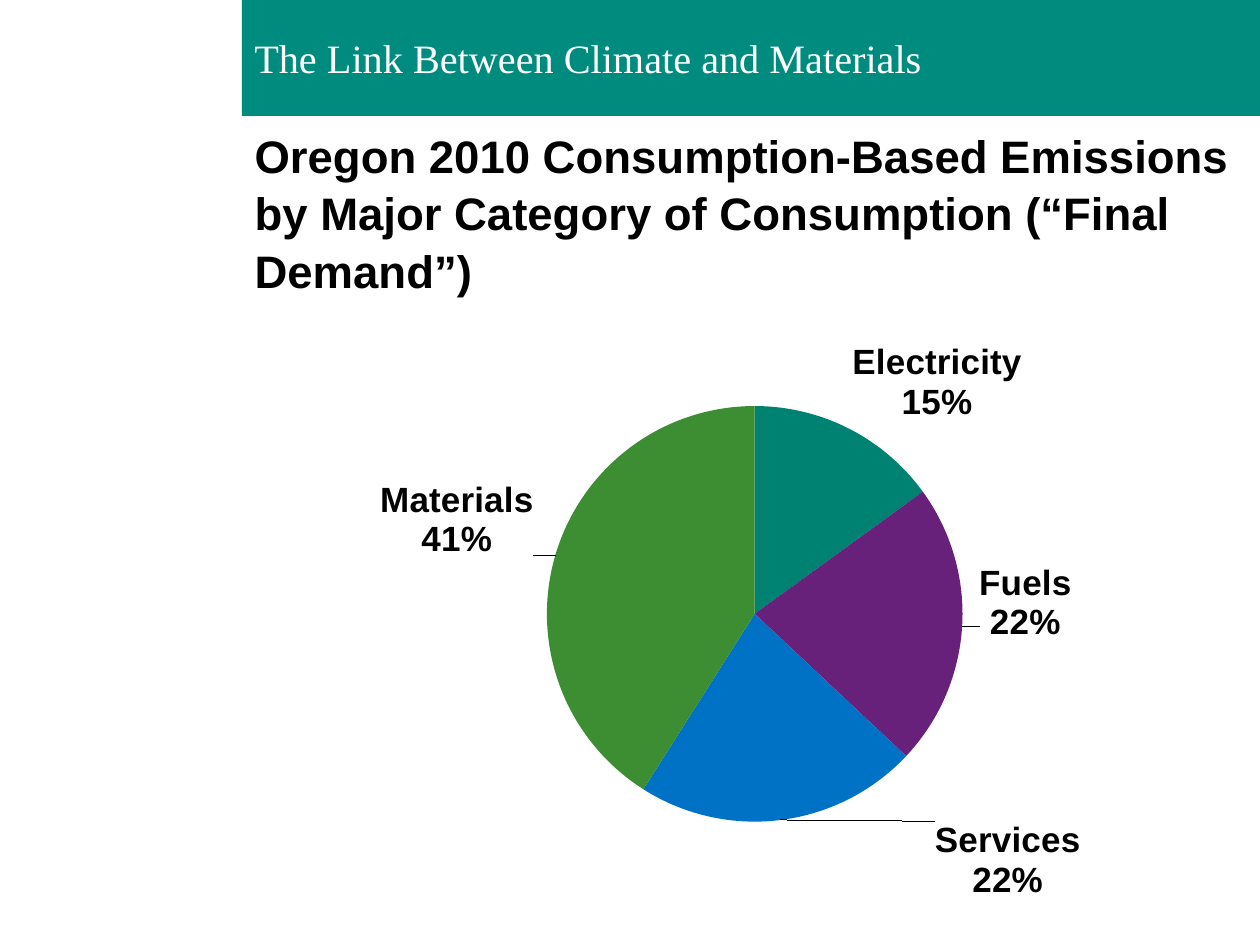
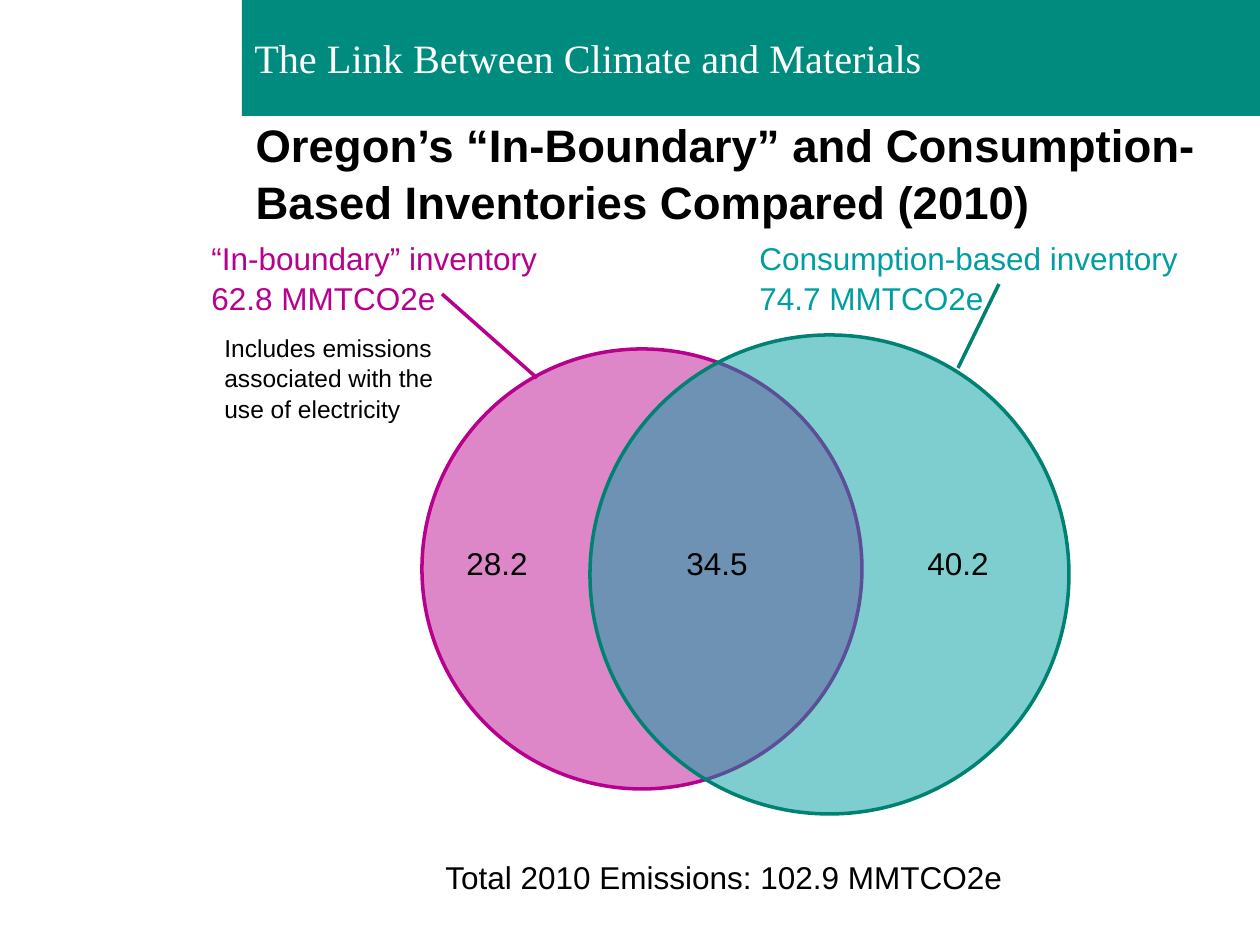
from lxml import etree
from pptx import Presentation
from pptx.chart.data import CategoryChartData
from pptx.dml.color import RGBColor
from pptx.enum.chart import XL_CHART_TYPE as CT
from pptx.enum.shapes import MSO_CONNECTOR as CN, MSO_SHAPE as SH
from pptx.enum.text import MSO_ANCHOR as ANCHOR, MSO_AUTO_SIZE as FIT, PP_ALIGN as ALIGN
from pptx.oxml import parse_xml
from pptx.oxml.ns import nsdecls, qn
from pptx.util import Emu, Pt

# Content
HEADER = "The Link Between Climate and Materials"
PIE_TITLE = ("Oregon 2010 Consumption-Based Emissions by Major Category "
             "of Consumption (“Final Demand”)")
VENN_TITLE = "Oregon’s “In-Boundary” and Consumption-Based Inventories Compared (2010)"

# Category, value, colour, label shift as a share of the chart
SLICES = [
    ("Electricity", 15, "008272", None),
    ("Fuels", 22, "68217A", (0.01, -0.04)),
    ("Services", 22, "0072C6", (0.16, -0.01)),
    ("Materials", 41, "3D8E33", (-0.015, 0.01)),
]
# Left, top, diameter, fill, opacity %, line
CIRCLES = [
    (422, 349, 440, "B7008E", 47, "B7008E"),
    (590, 335, 479, "009EA0", 50, "008272"),
]
REGIONS = [("28.2", 454), ("34.5", 674), ("40.2", 915)]
INVENTORIES = [
    (["“In-boundary” inventory", "62.8 MMTCO2e"], 199, 354, "B7008E"),
    (["Consumption-based inventory", "74.7 MMTCO2e"], 747, 447, "009EA0"),
]
POINTERS = [
    (442, 294, 537, 378, "B7008E"),
    (999, 284, 958, 368, "008272"),
]
NOTE = "Includes emissions associated with the use of electricity"
TOTAL = "Total 2010 Emissions: 102.9 MMTCO2e"

# Shared style
BAND, WHITE, BLACK = "008B7F", "FFFFFF", "000000"
SANS, SERIF = "Arial", "Times New Roman"
BAND_X, BAND_W, BAND_H = 242, 1018, 116


def px(n):
    return Emu(round(n * 914400 / 126))


def box(*lengths):
    return [px(n) for n in lengths]


def rgb(hex_color):
    return RGBColor.from_string(hex_color)


def write(tf, lines, size=18, color=BLACK, font=SANS, bold=False, spacing=1.05,
          wrap=True, anchor=ANCHOR.TOP, fit=FIT.SHAPE_TO_FIT_TEXT):
    tf.word_wrap, tf.vertical_anchor, tf.auto_size = wrap, anchor, fit
    for i, line in enumerate([lines] if isinstance(lines, str) else lines):
        p = tf.add_paragraph() if i else tf.paragraphs[0]
        p.alignment, p.line_spacing = ALIGN.LEFT, spacing
        r = p.add_run()
        r.text = line
        r.font.size, r.font.name, r.font.bold = Pt(size), font, bold
        r.font.color.rgb = rgb(color)


def add_text(s, lines, x, y, w, h, **fmt):
    tb = s.shapes.add_textbox(*box(x, y, w, h))
    write(tb.text_frame, lines, **fmt)
    return tb


def add_shape(s, kind, x, y, w, h, fill, opacity=100, line=None):
    sp = s.shapes.add_shape(kind, *box(x, y, w, h))
    sp.shadow.inherit = False
    sp.fill.solid()
    sp.fill.fore_color.rgb = rgb(fill)
    if opacity < 100:
        clr = sp.fill._xPr.find(".//" + qn("a:srgbClr"))
        etree.SubElement(clr, qn("a:alpha")).set("val", str(opacity * 1000))
    if line:
        sp.line.color.rgb, sp.line.width = rgb(line), Pt(2)
    else:
        sp.line.fill.background()
    return sp


def add_line(s, x1, y1, x2, y2, color):
    cn = s.shapes.add_connector(CN.STRAIGHT, *box(x1, y1, x2, y2))
    cn.line.color.rgb, cn.line.width = rgb(color), Pt(2)
    etree.SubElement(cn._element.spPr, qn("a:effectLst"))


def set_title(s, text, x, y, w, h, lift=0):
    """Fill the title; lift raises the middle-anchored text by that many px."""
    sp = s.shapes.title
    sp.left, sp.top, sp.width, sp.height = box(x, y, w, h)
    write(sp.text_frame, text, size=26, bold=True, anchor=ANCHOR.MIDDLE, fit=FIT.NONE)
    sp.text_frame.margin_bottom = px(6 + 2 * lift)


def band_to_layout(s):
    """Draw the header band and move it to the layout, behind its placeholders."""
    band = add_shape(s, SH.RECTANGLE, BAND_X, 0, BAND_W, BAND_H, BAND)
    head = add_text(s, HEADER, BAND_X, 26, BAND_W, 62, size=23, color=WHITE,
                    font=SERIF, spacing=1.0, anchor=ANCHOR.MIDDLE)
    tree = s.slide_layout.shapes.element
    for i, sp in enumerate((band, head)):
        tree.insert(2 + i, sp._element)


def manual_layout(**values):
    parts = "".join(f'<c:{k} val="{v}"/>' for k, v in values.items())
    return f"<c:layout><c:manualLayout>{parts}</c:manualLayout></c:layout>"


def pie_labels():
    """Category and percent outside each slice, some shifted with leader lines."""
    style = ('<c:spPr><a:noFill/><a:ln><a:noFill/></a:ln></c:spPr>'
             '<c:txPr><a:bodyPr/><a:p><a:pPr><a:defRPr sz="2000" b="1"><a:solidFill>'
             f'<a:srgbClr val="{BLACK}"/></a:solidFill><a:latin typeface="{SANS}"/>'
             '</a:defRPr></a:pPr><a:endParaRPr lang="en-US"/></a:p></c:txPr>'
             '<c:dLblPos val="outEnd"/>')
    flags = {"LegendKey": 0, "Val": 0, "CatName": 1, "SerName": 0, "Percent": 1,
             "BubbleSize": 0}
    style += "".join(f'<c:show{k} val="{v}"/>' for k, v in flags.items())
    style += "<c:separator>\n</c:separator>"
    shifted = "".join(
        f'<c:dLbl><c:idx val="{i}"/>{manual_layout(x=shift[0], y=shift[1])}{style}</c:dLbl>'
        for i, (*_, shift) in enumerate(SLICES) if shift)
    return parse_xml(f'<c:dLbls {nsdecls("c", "a")}>{shifted}{style}'
                     '<c:showLeaderLines val="1"/></c:dLbls>')


def add_pie(s, x, y, w, h):
    names, values, colors, _ = zip(*SLICES)
    data = CategoryChartData()
    data.categories = names
    data.add_series("Series 1", values)
    chart = s.shapes.add_chart(CT.PIE, *box(x, y, w, h), data).chart
    chart.has_legend = chart.has_title = False
    chart.font.size, chart.font.name = Pt(10), SANS
    chart.font.color.rgb = rgb(BLACK)
    plot = chart.plots[0]
    plot.vary_by_categories = True
    series = plot.series[0]
    for i, color in enumerate(colors):
        fill = series.points[i].format.fill
        fill.solid()
        fill.fore_color.rgb = rgb(color)
    series._element.find(qn("c:cat")).addprevious(pie_labels())
    # Fixed place for the pie inside the chart
    area = chart._chartSpace.find(".//" + qn("c:plotArea"))
    for old in area.findall(qn("c:layout")):
        area.remove(old)
    place = manual_layout(layoutTarget="inner", xMode="edge", yMode="edge",
                          x=0.312, y=0.147, w=0.434, h=0.686)
    area.insert(0, parse_xml(place.replace("<c:layout>", f'<c:layout {nsdecls("c")}>', 1)))


def main():
    prs = Presentation()
    prs.slide_width, prs.slide_height = box(1260, 945)
    layout = prs.slide_layouts[5]

    # Slide 1: emissions by category
    s = prs.slides.add_slide(layout)
    band_to_layout(s)
    set_title(s, PIE_TITLE, BAND_X, 180, BAND_W, 116, lift=27)
    add_pie(s, 248, 317, 958, 606)

    # Slide 2: the two inventories as overlapping circles
    s = prs.slides.add_slide(layout)
    set_title(s, VENN_TITLE, 243, 113, 995, 116)
    for x, y, d, fill, opacity, line in CIRCLES:
        add_shape(s, SH.OVAL, x, y, d, d, fill, opacity, line)
    for value, x in REGIONS:
        add_text(s, value, x, 536, 87, 50, wrap=False)
    for lines, x, w, color in INVENTORIES:
        add_text(s, lines, x, 231, w, 89, color=color, wrap=False)
    add_text(s, TOTAL, 433, 850, 587, 50, wrap=False)
    for pointer in POINTERS:
        add_line(s, *pointer)
    add_text(s, NOTE, 212, 325, 252, 102, size=14)

    prs.save("out.pptx")


if __name__ == "__main__":
    main()
